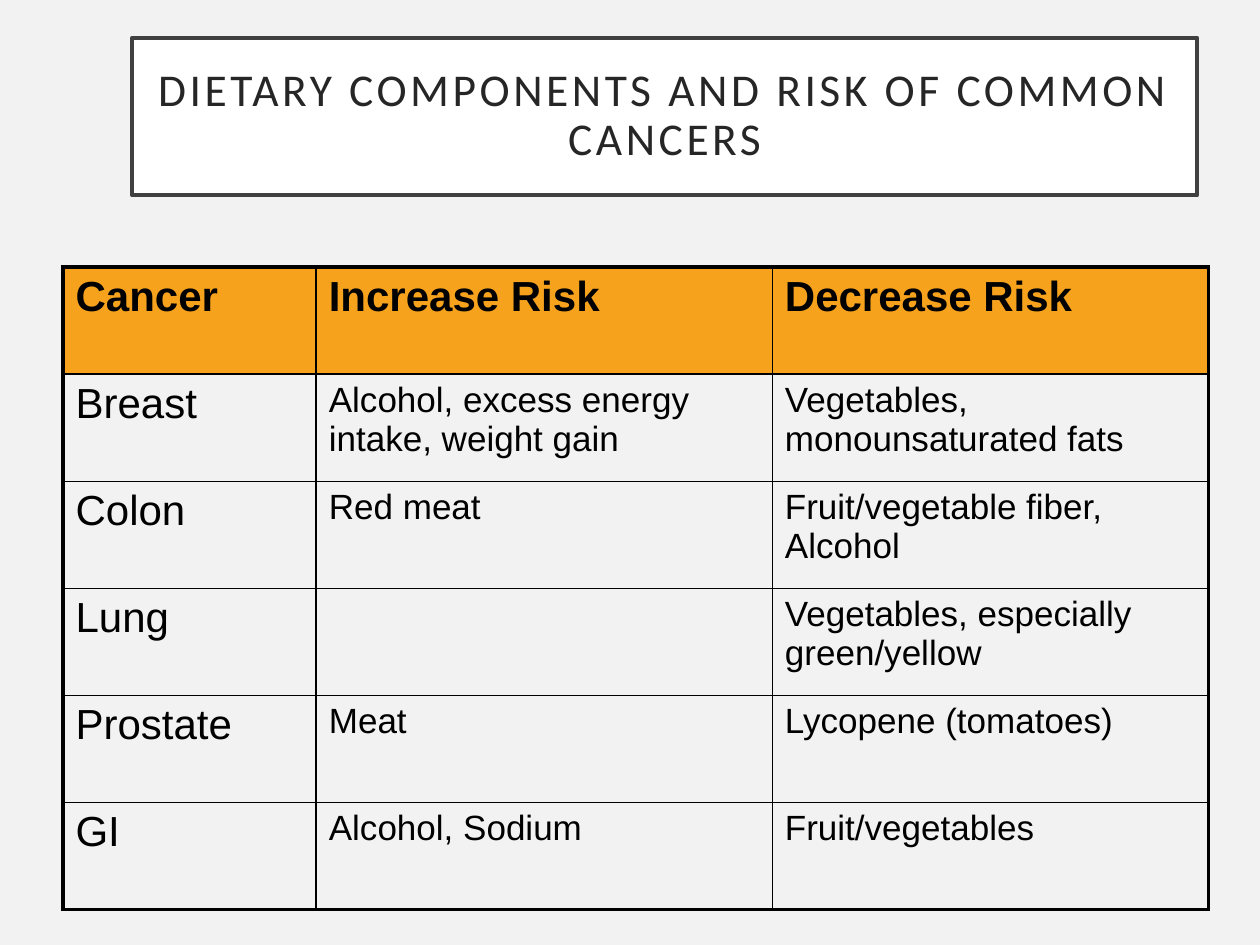
from dataclasses import dataclass

from lxml.etree import SubElement
from pptx import Presentation
from pptx.dml.color import RGBColor as Rgb
from pptx.enum.text import MSO_ANCHOR as Anchor, MSO_AUTO_SIZE as AutoSize, PP_ALIGN as Align
from pptx.oxml.ns import qn
from pptx.util import Inches, Pt


@dataclass(frozen=True)
class Theme:
    """Colours, fonts and sizes of the slide."""
    background: str = "F2F2F2"
    panel: str = "FFFFFF"
    frame: str = "404040"
    title_ink: str = "262626"
    ink: str = "000000"
    header: str = "F6A21D"
    title_font: str = "Calibri"
    body_font: str = "Arial"
    title_size: float = 26
    label_size: float = 24
    detail_size: float = 20
    frame_width: float = 2.5
    outer_border: float = 2.25
    inner_border: float = 1


THEME = Theme()
TITLE = "DIETARY COMPONENTS AND RISK OF COMMON CANCERS"
COLUMN_WIDTHS = (2.01, 3.62, 3.46)
ROW_HEIGHT = 0.85
ROWS = (
    ("Cancer", "Increase Risk", "Decrease Risk"),
    ("Breast", "Alcohol, excess energy intake, weight gain", "Vegetables, monounsaturated fats"),
    ("Colon", "Red meat", "Fruit/vegetable fiber, Alcohol"),
    ("Lung", "", "Vegetables, especially green/yellow"),
    ("Prostate", "Meat", "Lycopene (tomatoes)"),
    ("GI", "Alcohol, Sodium", "Fruit/vegetables"),
)


def style_font(font, name, size, colour, bold=False):
    """Set the typeface, size, colour and weight of a font."""
    font.name, font.size, font.bold = name, Pt(size), bold
    font.color.rgb = Rgb.from_string(colour)


def paint(fill, colour):
    """Give a fill one solid colour."""
    fill.solid()
    fill.fore_color.rgb = Rgb.from_string(colour)


def format_title(box):
    """Turn the title placeholder into a framed, centred panel."""
    box.left, box.top, box.width, box.height = map(Inches, (1.05, 0.3, 8.45, 1.25))
    paint(box.fill, THEME.panel)
    paint(box.line.fill, THEME.frame)
    box.line.width = Pt(THEME.frame_width)
    frame = box.text_frame
    frame.text = TITLE
    frame.word_wrap, frame.auto_size = True, AutoSize.NONE
    frame.vertical_anchor = Anchor.MIDDLE
    frame.margin_left = frame.margin_right = Inches(0.2)
    frame.margin_top = frame.margin_bottom = Inches(0.2)
    para = frame.paragraphs[0]
    para.alignment, para.line_spacing = Align.CENTER, 0.9
    span = para.runs[0]
    style_font(span.font, THEME.title_font, THEME.title_size, THEME.title_ink)
    span.font._element.set("spc", "200")


def set_borders(cell, outer_sides):
    """Draw all four borders, heavier on the sides at the table's edge."""
    properties = cell._tc.get_or_add_tcPr()
    for index, (side, is_outer) in enumerate(zip("LRTB", outer_sides)):
        width = THEME.outer_border if is_outer else THEME.inner_border
        line = SubElement(properties, qn(f"a:ln{side}"), w=str(Pt(width)))
        fill = SubElement(line, qn("a:solidFill"))
        SubElement(fill, qn("a:srgbClr"), val=THEME.ink)
        properties.insert(index, line)


def fill_cell(cell, text, row, column):
    """Write one cell and format it by its place in the table."""
    is_header = row == 0
    if is_header:
        paint(cell.fill, THEME.header)
    else:
        cell.fill.background()
    cell.text_frame.text = text
    size = THEME.label_size if is_header or column == 0 else THEME.detail_size
    for span in cell.text_frame.paragraphs[0].runs:
        style_font(span.font, THEME.body_font, size, THEME.ink, is_header)
    last_row, last_column = len(ROWS) - 1, len(COLUMN_WIDTHS) - 1
    set_borders(cell, (column == 0, column == last_column, is_header, row == last_row))


def add_risk_table(page):
    """Add the table of cancers and the foods that change their risk."""
    table = page.shapes.add_table(
        len(ROWS), len(COLUMN_WIDTHS), Inches(0.5), Inches(2.12),
        Inches(sum(COLUMN_WIDTHS)), Inches(ROW_HEIGHT * len(ROWS))).table
    table.horz_banding = False
    for column, width in zip(table.columns, COLUMN_WIDTHS):
        column.width = Inches(width)
    for row, texts in enumerate(ROWS):
        table.rows[row].height = Inches(ROW_HEIGHT)
        for column, text in enumerate(texts):
            fill_cell(table.cell(row, column), text, row, column)


def main():
    """Build the slide and save it."""
    deck = Presentation()
    deck.slide_width, deck.slide_height = Inches(10), Inches(7.5)
    page = deck.slides.add_slide(deck.slide_layouts.get_by_name("Title Only"))
    paint(page.background.fill, THEME.background)
    format_title(page.shapes.title)
    add_risk_table(page)
    deck.save("out.pptx")


if __name__ == "__main__":
    main()
